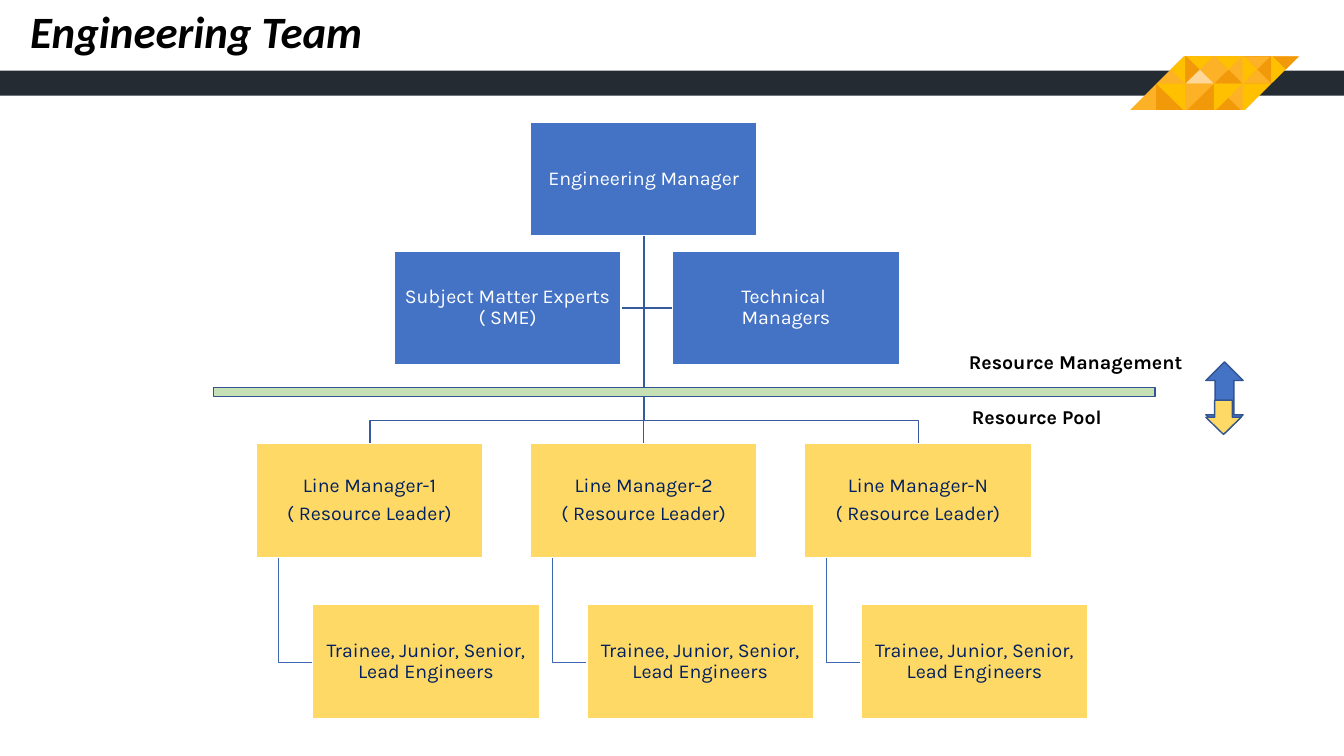
from copy import deepcopy
from dataclasses import dataclass, field
from typing import Optional

from pptx import Presentation
from pptx.dml.color import RGBColor
from pptx.enum.shapes import MSO_CONNECTOR as CONN, MSO_SHAPE as SHAPE
from pptx.enum.text import MSO_ANCHOR as ANCHOR, MSO_AUTO_SIZE as AUTO, PP_ALIGN as ALIGN
from pptx.oxml.ns import qn
from pptx.oxml.xmlchemy import OxmlElement
from pptx.util import Inches, Pt

BLUE, YELLOW, GREEN, WHITE, BLACK = "4472C4", "FFD966", "C5E0B4", "FFFFFF", "000000"
NAVY, OUTLINE, LINK, STAFF_LINK = "002060", "325491", "365B9D", "3E67B2"
ORANGE, AMBER, GOLD, PALE = "F2990A", "FDB127", "FFC000", "FFD899"
TEXT = {"size": Pt(14), "name": "Karla"}

BOX_W, BOX_H = 2.25, 1.13
CENTRE = 6.39
LEAD_X, LEAD_Y, LEAD_STEP = 2.54, 4.4, 2.72
STAFF_DX, STAFF_Y = 0.56, 6

# Mosaic tiles: two rows of cells on a slanted band
TILE_X, TILE_W = 11.47, 0.285
TOP, SEAM, BOTTOM = 0.56, 0.83, 1.09


@dataclass
class Box:
    x: float
    y: float
    lines: list[str]
    fill: str = BLUE
    color: str = WHITE


@dataclass
class Tile:
    col: int
    row: int
    square: Optional[str] = None
    wedges: dict[str, str] = field(default_factory=dict)


@dataclass
class Preset:
    kind: int
    x: float
    y: float
    w: float
    h: float
    fill: str
    line: Optional[str] = OUTLINE


@dataclass
class Label:
    x: float
    y: float
    w: float
    text: str


TILES = [
    Tile(1, 0, AMBER, {"seam": PALE, "outer": GOLD, "left": ORANGE}),
    Tile(2, 0, AMBER, {"seam": ORANGE, "outer": GOLD, "left": AMBER}),
    Tile(3, 0, ORANGE, {"seam": AMBER, "outer": AMBER, "left": GOLD}),
    Tile(4, 0, None, {"outer": ORANGE, "left": GOLD}),
    Tile(0, 0, None, {"right": GOLD}),
    Tile(0, 1, ORANGE, {"outer": ORANGE, "seam": GOLD, "right": GOLD}),
    Tile(1, 1, ORANGE, {"outer": ORANGE, "seam": AMBER, "left": AMBER}),
    Tile(2, 1, AMBER, {"outer": ORANGE, "seam": GOLD, "left": GOLD}),
    Tile(3, 1, None, {"seam": GOLD, "left": GOLD}),
]

prs = Presentation()
prs.slide_width, prs.slide_height = Inches(13.33), Inches(7.5)
s = prs.slides.add_slide(prs.slide_layouts[6])


def rgb(color: str) -> RGBColor:
    return RGBColor.from_string(color)


def style(sp, fill: Optional[str], line: Optional[str]):
    sp.shadow.inherit = False
    for fmt, color in ((sp.fill, fill), (sp.line.fill, line)):
        if color:
            fmt.solid()
            fmt.fore_color.rgb = rgb(color)
        else:
            fmt.background()
    if line:
        sp.line.width = Pt(1)
    return sp


def outline(points: list[tuple], fill: Optional[str] = None, line: Optional[str] = None):
    first, *rest = [(Inches(x), Inches(y)) for x, y in points]
    fb = s.shapes.build_freeform(*first, scale=1.0)
    fb.add_line_segments(rest, close=fill is not None)
    return style(fb.convert_to_shape(), fill, line)


def preset(d: Preset):
    sp = s.shapes.add_shape(d.kind, Inches(d.x), Inches(d.y), Inches(d.w), Inches(d.h))
    return style(sp, d.fill, d.line)


def write(tf, lines: list[str], color: str, font: dict, para: dict) -> None:
    for i, line in enumerate(lines):
        p = tf.paragraphs[0] if i == 0 else tf.add_paragraph()
        p.text = line
        for name, value in para.items():
            setattr(p, name, value)
        for r in p.runs:
            for name, value in font.items():
                setattr(r.font, name, value)
            r.font.color.rgb = rgb(color)
        # A line break takes the size of the text around it
        for br in p._p.findall(qn("a:br")):
            br.insert(0, deepcopy(p.runs[0]._r.rPr))


def draw_box(d: Box):
    sp = preset(Preset(SHAPE.RECTANGLE, d.x, d.y, BOX_W, BOX_H, d.fill, WHITE))
    tf = sp.text_frame
    frame = dict.fromkeys(("margin_left", "margin_top", "margin_right", "margin_bottom"), Inches(0.01))
    for name, value in {**frame, "word_wrap": True, "vertical_anchor": ANCHOR.MIDDLE}.items():
        setattr(tf, name, value)
    write(tf, d.lines, d.color, TEXT,
          {"alignment": ALIGN.CENTER, "line_spacing": 0.9, "space_after": Pt(5)})
    return sp


def draw_link(x1: float, y1: float, x2: float, y2: float):
    c = s.shapes.add_connector(CONN.STRAIGHT, Inches(x1), Inches(y1), Inches(x2), Inches(y2))
    c.line.color.rgb = rgb(LINK)
    c.line.width = Pt(1)
    c._element.spPr.append(OxmlElement("a:effectLst"))
    return c


def draw_tile(d: Tile) -> None:
    x1 = TILE_X + d.col * TILE_W
    x2, cx = x1 + TILE_W, x1 + TILE_W / 2
    edge, cy, cut = ((TOP, 0.69, 0.01), (BOTTOM, 0.97, 0.02))[d.row]
    wedges = {
        "seam": [(x1, SEAM), (x2, SEAM)],
        "outer": [(x1 + cut, edge), (x2 - cut, edge)],
        "left": [(x1, SEAM), (x1, edge), (x1 + cut, edge)],
        "right": [(x2, SEAM), (x2, edge), (x2 - cut, edge)],
    }
    if d.square:
        outline([(x1, edge), (x2, edge), (x2, SEAM), (x1, SEAM)], d.square)
    for side, color in d.wedges.items():
        outline(wedges[side] + [(cx, cy)], color)


# Header band, mosaic and title
preset(Preset(SHAPE.RECTANGLE, 0, 0.7, 13.33, 0.25, "252B33", None))
outline([(11.74, TOP), (11.21, BOTTOM), (12.35, BOTTOM), (12.87, TOP)], AMBER)
for tile in TILES:
    draw_tile(tile)

title = s.shapes.add_textbox(Inches(0.2), 0, Inches(11.5), Inches(0.68)).text_frame
title.word_wrap, title.vertical_anchor = True, ANCHOR.MIDDLE
write(title, ["Engineering Team"], BLACK,
      {"size": Pt(32), "name": "Calibri", "bold": True, "italic": True}, {"line_spacing": 0.9})

# Links, behind the boxes
advisers_link = draw_link(6.16, 3.06, 6.67, 3.06)
trunk = draw_link(CENTRE, 2.33, CENTRE, LEAD_Y)
for x in (CENTRE - LEAD_STEP, CENTRE + LEAD_STEP):
    outline([(CENTRE, 2.33), (CENTRE, 4.17), (x, 4.17), (x, LEAD_Y)], line=LINK)
lead_xs = [LEAD_X + i * LEAD_STEP for i in range(3)]
for x in lead_xs:
    outline([(x + 0.22, 5.53), (x + 0.22, 6.57), (x + STAFF_DX, 6.57)], line=STAFF_LINK)

# Organisation boxes
manager = draw_box(Box(5.26, 1.21, ["Engineering Manager"]))
experts = draw_box(Box(3.91, 2.49, ["Subject Matter Experts ( SME)"]))
technical = draw_box(Box(6.67, 2.49, ["Technical \vManagers"]))
leads = []
for x, mark in zip(lead_xs, "12N"):
    leads.append(draw_box(Box(x, LEAD_Y, [f"Line Manager-{mark}", "( Resource Leader)"], YELLOW, NAVY)))
    draw_box(Box(x + STAFF_DX, STAFF_Y, ["Trainee, Junior, Senior, Lead Engineers"], YELLOW, NAVY))

for link, start, start_side, end, end_side in ((advisers_link, experts, 3, technical, 1),
                                               (trunk, manager, 2, leads[1], 0)):
    link.begin_connect(start, start_side)
    link.end_connect(end, end_side)

# Divider, labels and arrows
preset(Preset(SHAPE.MATH_MINUS, 0.43, 3.71, 12.71, 0.36, GREEN))
for label in (Label(9.54, 3.97, 1.5, "Resource Pool"), Label(9.51, 3.42, 2.32, "Resource Management")):
    tf = s.shapes.add_textbox(Inches(label.x), Inches(label.y), Inches(label.w), Inches(0.34)).text_frame
    tf.word_wrap, tf.auto_size = False, AUTO.SHAPE_TO_FIT_TEXT
    write(tf, [label.text], BLACK, {**TEXT, "bold": True}, {})
preset(Preset(SHAPE.UP_DOWN_ARROW, 11.96, 3.59, 0.37, 0.71, BLUE))
preset(Preset(SHAPE.DOWN_ARROW, 11.96, 3.97, 0.35, 0.34, YELLOW))

prs.save("out.pptx")
